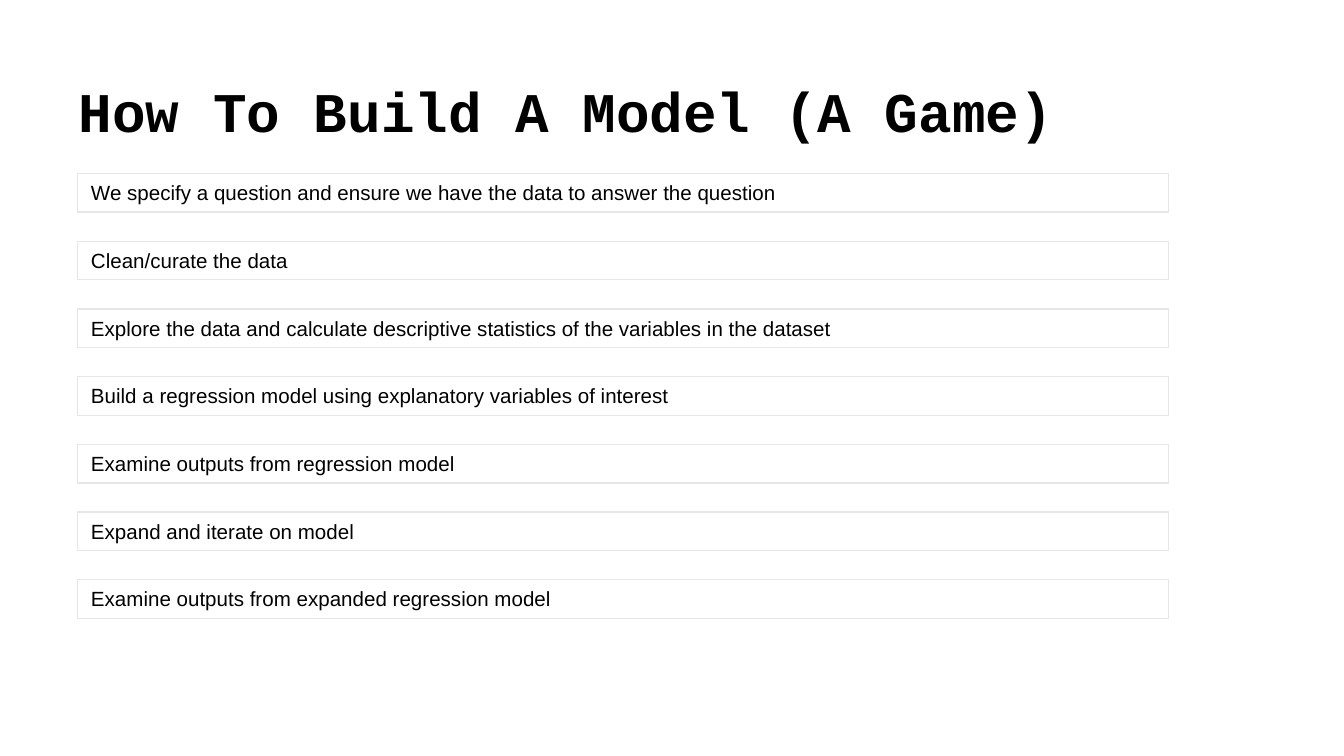
from pptx import Presentation
from pptx.dml.color import RGBColor
from pptx.enum.shapes import MSO_SHAPE
from pptx.enum.text import MSO_ANCHOR, MSO_AUTO_SIZE, PP_ALIGN
from pptx.util import Cm, Pt

HEADING = "How To Build A Model (A Game)"
STEPS = [
    "We specify a question and ensure we have the data to answer the question",
    "Clean/curate the data",
    "Explore the data and calculate descriptive statistics of the variables in the dataset",
    "Build a regression model using explanatory variables of interest",
    "Examine outputs from regression model",
    "Expand and iterate on model",
    "Examine outputs from expanded regression model",
]
COLORS = {"text": "000000", "border": "E7E6E6"}
STEP_LEFT, STEP_TOP, STEP_WIDTH, STEP_HEIGHT = 1.47, 3.28, 20.62, 0.73
STEP_PITCH = 1.28


def write(frame, text, font_name, size, bold=False):
    frame.word_wrap = True
    paragraph = frame.paragraphs[0]
    paragraph.text = text
    paragraph.alignment = PP_ALIGN.LEFT
    font = paragraph.font
    font.name = font_name
    font.size = Pt(size)
    font.bold = bold
    font.color.rgb = RGBColor.from_string(COLORS["text"])


deck = Presentation()
deck.slide_width, deck.slide_height = Cm(25.4), Cm(14.29)
slide = deck.slides.add_slide(deck.slide_layouts[6])

heading = slide.shapes.add_textbox(Cm(1.24), Cm(0.08), Cm(22.76), Cm(2.77))
heading.text_frame.vertical_anchor = MSO_ANCHOR.BOTTOM
write(heading.text_frame, HEADING, "Courier New", 30, bold=True)

for index, text in enumerate(STEPS):
    step = slide.shapes.add_shape(
        MSO_SHAPE.RECTANGLE,
        Cm(STEP_LEFT), Cm(STEP_TOP + index * STEP_PITCH),
        Cm(STEP_WIDTH), Cm(STEP_HEIGHT),
    )
    step.shadow.inherit = False
    step.fill.background()
    step.line.color.rgb = RGBColor.from_string(COLORS["border"])
    step.line.width = Pt(0.75)
    step.text_frame.vertical_anchor = MSO_ANCHOR.TOP
    step.text_frame.auto_size = MSO_AUTO_SIZE.SHAPE_TO_FIT_TEXT
    write(step.text_frame, text, "Arial", 11)

deck.save("out.pptx")
